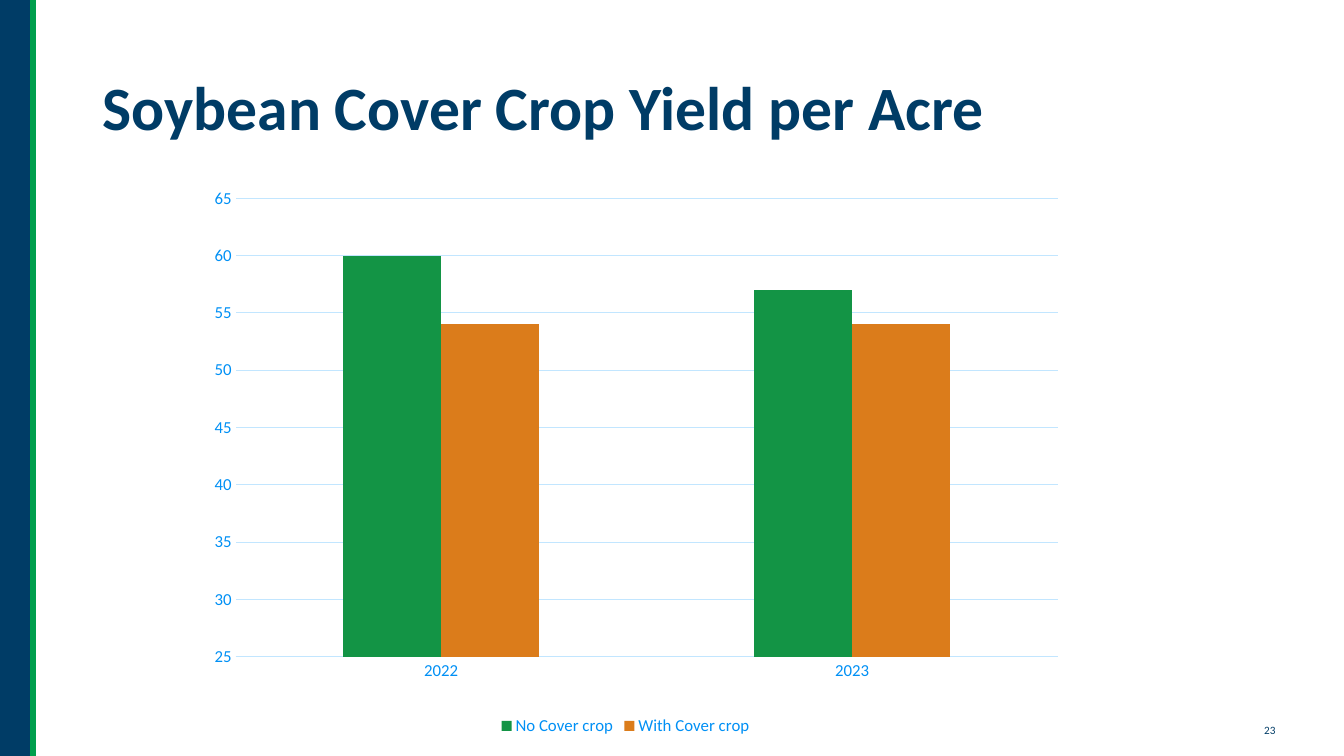
"""Build the soybean cover crop yield slide."""
from dataclasses import dataclass

from lxml import etree
from pptx import Presentation
from pptx.chart import data as cd
from pptx.dml.color import RGBColor
from pptx.enum import chart as ec, shapes, text
from pptx.oxml import ns
from pptx.util import Inches, Pt

FONT = "Calibri"
NAVY = RGBColor(0x00, 0x3C, 0x66)
GREEN = RGBColor(0x00, 0x9F, 0x4D)
BLUE = RGBColor(0x00, 0x90, 0xF5)
PALE = RGBColor(0xC2, 0xE6, 0xFF)
LEAF = RGBColor(0x13, 0x94, 0x45)
ORANGE = RGBColor(0xDB, 0x7C, 0x1B)


@dataclass(frozen=True)
class Series:
    name: str
    values: tuple[int, ...]
    color: RGBColor


YEARS = ("2022", "2023")
YIELDS = (
    Series("No Cover crop", (60, 57), LEAF),
    Series("With Cover crop", (54, 54), ORANGE),
)
PLOT_AREA = {"x": 0.065, "y": 0.094, "w": 0.917, "h": 0.767}


def set_font(font, size: float, color: RGBColor, bold: bool = False) -> None:
    font.name, font.size, font.bold = FONT, Pt(size), bold
    font.color.rgb = color


def add_text(s, words: str, box: tuple[float, ...], *, size: float,
             bold: bool = False, wrap: bool = True, spacing: float = 1.0,
             anchor=text.MSO_ANCHOR.TOP) -> None:
    tf = s.shapes.add_textbox(*map(Inches, box)).text_frame
    tf.word_wrap, tf.vertical_anchor = wrap, anchor
    p = tf.paragraphs[0]
    p.line_spacing = spacing
    r = p.add_run()
    r.text = words
    set_font(r.font, size, NAVY, bold)


def add_side_band(s) -> None:
    sp = s.shapes.add_shape(shapes.MSO_SHAPE.RECTANGLE, 0, 0, Inches(0.33), Inches(7.5))
    sp.shadow.inherit = False
    sp.fill.solid()
    sp.fill.fore_color.rgb = NAVY
    sp.line.fill.background()
    edge = s.shapes.add_connector(shapes.MSO_CONNECTOR.STRAIGHT,
                                  Inches(0.33), 0, Inches(0.33), Inches(7.5))
    edge.line.color.rgb = GREEN
    edge.line.width = Pt(4.5)
    etree.SubElement(edge._element.spPr, ns.qn("a:effectLst"))


def style_line(line) -> None:
    line.color.rgb = PALE
    line.width = Pt(0.75)


def place_plot(plot) -> None:
    area = plot._element.getparent()
    for old in area.findall(ns.qn("c:layout")):
        area.remove(old)
    layout = etree.Element(ns.qn("c:layout"))
    manual = etree.SubElement(layout, ns.qn("c:manualLayout"))
    settings = {"layoutTarget": "inner", "xMode": "edge", "yMode": "edge", **PLOT_AREA}
    for tag, value in settings.items():
        etree.SubElement(manual, ns.qn(f"c:{tag}")).set("val", str(value))
    area.insert(0, layout)


def add_yield_chart(s) -> None:
    data = cd.CategoryChartData()
    data.categories = YEARS
    for item in YIELDS:
        data.add_series(item.name, item.values)
    chart = s.shapes.add_chart(ec.XL_CHART_TYPE.COLUMN_CLUSTERED, Inches(1.76), Inches(1.41),
                               Inches(8.89), Inches(5.93), data).chart
    chart.has_title = False
    set_font(chart.font, 10, NAVY)
    plot = chart.plots[0]
    plot.gap_width, plot.overlap, plot.vary_by_categories = 219, 0, False
    place_plot(plot)
    for series, item in zip(plot.series, YIELDS):
        series.format.fill.solid()
        series.format.fill.fore_color.rgb = item.color
    for axis in (chart.category_axis, chart.value_axis):
        axis.major_tick_mark = axis.minor_tick_mark = ec.XL_TICK_MARK.NONE
        set_font(axis.tick_labels.font, 12, BLUE)
    style_line(chart.category_axis.format.line)
    values = chart.value_axis
    values.minimum_scale, values.maximum_scale, values.major_unit = 25, 65, 5
    values.format.line.fill.background()
    style_line(values.major_gridlines.format.line)
    chart.has_legend = True
    chart.legend.position = ec.XL_LEGEND_POSITION.BOTTOM
    chart.legend.include_in_layout = False
    set_font(chart.legend.font, 12, BLUE)


def main() -> None:
    prs = Presentation()
    prs.slide_width, prs.slide_height = Inches(13.33), Inches(7.5)
    s = prs.slides.add_slide(prs.slide_layouts[6])
    add_side_band(s)
    add_text(s, "Soybean Cover Crop Yield per Acre", (0.92, 0.37, 11.5, 1.45), size=44,
             bold=True, spacing=0.9, anchor=text.MSO_ANCHOR.MIDDLE)
    add_yield_chart(s)
    add_text(s, "23", (12.44, 7.13, 0.34, 0.24), size=8, wrap=False)
    prs.save("out.pptx")


if __name__ == "__main__":
    main()
